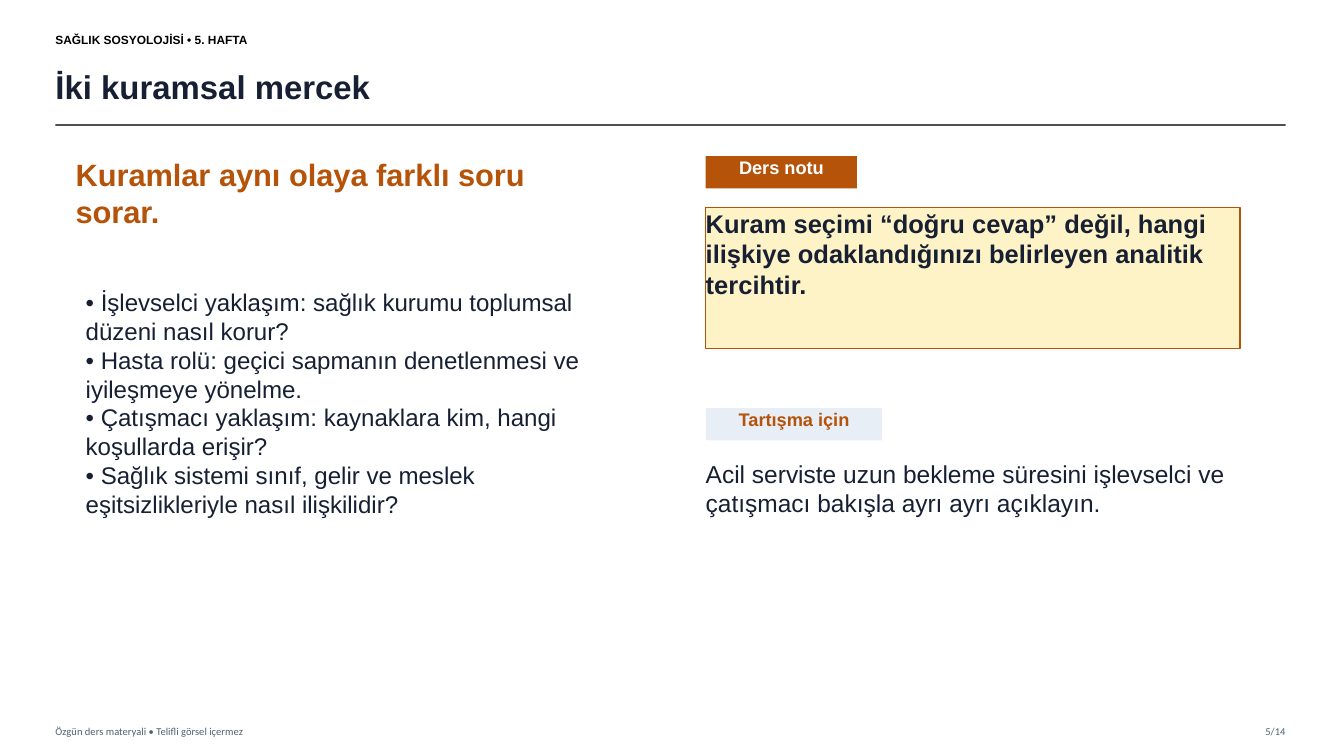
from lxml import etree
from pptx import Presentation
from pptx.dml.color import RGBColor
from pptx.enum.shapes import MSO_CONNECTOR, MSO_SHAPE
from pptx.enum.text import MSO_ANCHOR, MSO_AUTO_SIZE, PP_ALIGN
from pptx.oxml.ns import qn
from pptx.util import Inches, Pt

INK = RGBColor(0x17, 0x20, 0x33)
ORANGE = RGBColor(0xB4, 0x53, 0x09)
CREAM = RGBColor(0xFE, 0xF3, 0xC7)
PALE_BLUE = RGBColor(0xE8, 0xEE, 0xF5)
SLATE = RGBColor(0x50, 0x60, 0x70)
RULE_GREY = RGBColor(0x33, 0x33, 0x33)
BLACK = RGBColor(0, 0, 0)
WHITE = RGBColor(0xFF, 0xFF, 0xFF)

LEFT = 0.55
RIGHT = 12.75
NOTES_LEFT = 7
NOTES_WIDTH = 5.3


class LectureSlide:
    font_name = "Arial"

    def __init__(self, presentation):
        self.slide = presentation.slides.add_slide(presentation.slide_layouts[1])

    def set_text(self, shape, text, size, color, bold=False, font_name=None,
                 align=PP_ALIGN.LEFT, anchor=MSO_ANCHOR.TOP, flush=False):
        """Fill and format a shape; flush drops the template's bullets and indents."""
        frame = shape.text_frame
        frame.text = text
        frame.word_wrap = True
        frame.auto_size = MSO_AUTO_SIZE.NONE
        frame.vertical_anchor = anchor
        frame.margin_left = frame.margin_right = 0
        frame.margin_top = frame.margin_bottom = 0
        for paragraph in frame.paragraphs:
            if flush:
                properties = paragraph._p.get_or_add_pPr()
                properties.set("marL", "0")
                properties.set("indent", "0")
                etree.SubElement(properties, qn("a:buNone"))
            paragraph.alignment = align
            paragraph.space_before = Pt(0)
            font = paragraph.font
            font.name = font_name or self.font_name
            font.size = Pt(size)
            font.bold = bold
            font.color.rgb = color

    def placeholder(self, index, text, box, size, color, **style):
        holder = self.slide.placeholders[index]
        holder.left, holder.top, holder.width, holder.height = map(Inches, box)
        self.set_text(holder, text, size, color, **style)

    def title(self, text, box):
        self.placeholder(0, text, box, 23.5, INK, bold=True, anchor=MSO_ANCHOR.MIDDLE)

    def question_list(self, questions, box):
        """Fill the body with marked lines whose wrapped text returns to the margin."""
        marked = "\n".join(f"• {question}" for question in questions)
        self.placeholder(1, marked, box, 17.2, INK, flush=True)

    def text(self, text, box, size, color, **style):
        text_box = self.slide.shapes.add_textbox(*map(Inches, box))
        self.set_text(text_box, text, size, color, **style)

    def panel(self, text, box, fill, size, color, border=None, **style):
        panel = self.slide.shapes.add_shape(MSO_SHAPE.RECTANGLE, *map(Inches, box))
        panel.shadow.inherit = False
        panel.fill.solid()
        panel.fill.fore_color.rgb = fill
        if border is None:
            panel.line.fill.background()
        else:
            panel.line.color.rgb = border
            panel.line.width = Pt(1)
        self.set_text(panel, text, size, color, bold=True, **style)

    def label(self, text, top, width, fill, color):
        self.panel(text, (NOTES_LEFT, top, width, 0.32), fill, 13, color,
                   align=PP_ALIGN.CENTER)

    def footer(self, text, left, width, align=PP_ALIGN.LEFT):
        self.text(text, (left, 7.14, width, 0.22), 7.5, SLATE,
                  font_name="Calibri", align=align, anchor=MSO_ANCHOR.MIDDLE)

    def rule(self, top):
        rule = self.slide.shapes.add_connector(
            MSO_CONNECTOR.STRAIGHT, Inches(LEFT), Inches(top), Inches(RIGHT), Inches(top))
        rule.line.color.rgb = RULE_GREY
        rule.line.width = Pt(1.2)
        properties = rule._element.spPr
        color = properties.find(".//" + qn("a:srgbClr"))
        etree.SubElement(color, qn("a:alpha"), val="85000")
        etree.SubElement(properties, qn("a:effectLst"))


def main():
    presentation = Presentation()
    presentation.slide_width = Inches(13.33)
    presentation.slide_height = Inches(7.5)
    lecture = LectureSlide(presentation)

    lecture.text("SAĞLIK SOSYOLOJİSİ • 5. HAFTA", (LEFT, 0.25, 3.6, 0.28), 8.5, BLACK,
                 bold=True, anchor=MSO_ANCHOR.MIDDLE)
    lecture.title("İki kuramsal mercek", (LEFT, 0.58, 11.95, 0.55))
    lecture.rule(1.24)
    lecture.footer("Özgün ders materyali • Telifli görsel içermez", LEFT, 6)
    lecture.footer("5/14", RIGHT - 0.65, 0.65, PP_ALIGN.RIGHT)

    lecture.text("Kuramlar aynı olaya farklı soru sorar.", (0.75, 1.55, 4.6, 1),
                 22, ORANGE, bold=True)
    lecture.question_list([
        "İşlevselci yaklaşım: sağlık kurumu toplumsal düzeni nasıl korur?",
        "Hasta rolü: geçici sapmanın denetlenmesi ve iyileşmeye yönelme.",
        "Çatışmacı yaklaşım: kaynaklara kim, hangi koşullarda erişir?",
        "Sağlık sistemi sınıf, gelir ve meslek eşitsizlikleriyle nasıl ilişkilidir?",
    ], (0.85, 2.85, 5.25, 2.7))

    lecture.label("Ders notu", 1.55, 1.5, ORANGE, WHITE)
    lecture.panel("Kuram seçimi “doğru cevap” değil, hangi ilişkiye odaklandığınızı "
                  "belirleyen analitik tercihtir.",
                  (NOTES_LEFT, 2.06, NOTES_WIDTH, 1.4), CREAM, 18.2, INK, border=ORANGE)
    lecture.label("Tartışma için", 4.05, 1.75, PALE_BLUE, ORANGE)
    lecture.text("Acil serviste uzun bekleme süresini işlevselci ve çatışmacı bakışla "
                 "ayrı ayrı açıklayın.",
                 (NOTES_LEFT, 4.55, NOTES_WIDTH, 1.25), 17.5, INK)

    presentation.save("out.pptx")


if __name__ == "__main__":
    main()
